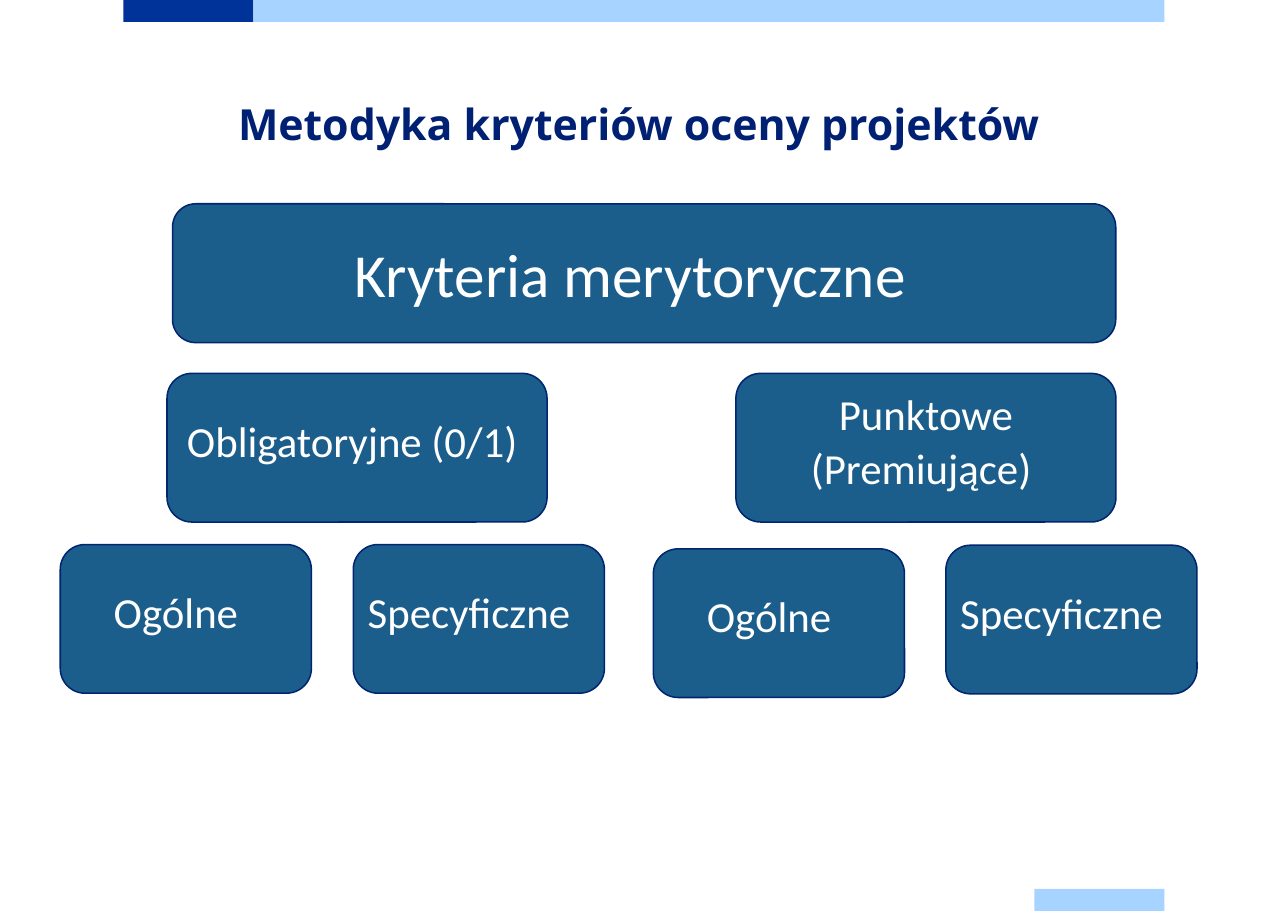
import dataclasses
import typing

import lxml.etree
import pptx
import pptx.dml.color
import pptx.enum.shapes
import pptx.enum.text
import pptx.oxml.ns
import pptx.util

W, H = pptx.util.Inches(11.69), pptx.util.Inches(8.27)
COLORS = {
    "navy": "003399",
    "sky": "A6D3FF",
    "title": "002073",
    "box": "1B5D8B",
    "edge": "002671",
    "text": "FFFFFF",
}
SHAPES = pptx.enum.shapes.MSO_SHAPE
ANCHOR = pptx.enum.text.MSO_ANCHOR


@dataclasses.dataclass(frozen=True)
class Area:
    """Percentages of the slide's width and height."""
    left: float
    top: float
    width: float
    height: float

    def emu(self) -> tuple[int, int, int, int]:
        return (int(W * self.left / 100), int(H * self.top / 100),
                int(W * self.width / 100), int(H * self.height / 100))


@dataclasses.dataclass(frozen=True)
class Style:
    size: float = 28
    font: str = "Calibri"
    color: str = "text"
    bold: bool = False
    spacing: float | None = 24
    before: float = 11


@dataclasses.dataclass(frozen=True)
class Box:
    area: Area
    lines: tuple[str, ...]
    style: Style = Style()
    left_inset: float = 0.1
    right_inset: float = 0.1


def rgb(name: str) -> pptx.dml.color.RGBColor:
    return pptx.dml.color.RGBColor.from_string(COLORS[name])


def place(sp: typing.Any, area: Area) -> None:
    sp.left, sp.top, sp.width, sp.height = area.emu()


def write(sp: typing.Any, lines: tuple[str, ...], style: Style,
          anchor: typing.Any, left: float = 0, right: float = 0,
          vertical: float = 0) -> None:
    tf = sp.text_frame
    tf.word_wrap = True
    tf.auto_size = pptx.enum.text.MSO_AUTO_SIZE.NONE
    tf.vertical_anchor = anchor
    tf.margin_left, tf.margin_right = pptx.util.Inches(left), pptx.util.Inches(right)
    tf.margin_top = tf.margin_bottom = pptx.util.Inches(vertical)
    for i, line in enumerate(lines):
        p = tf.add_paragraph() if i else tf.paragraphs[0]
        p.alignment = pptx.enum.text.PP_ALIGN.CENTER
        p.space_before = pptx.util.Pt(style.before if i else 0)
        if style.spacing:
            p.line_spacing = pptx.util.Pt(style.spacing)
        r = p.add_run()
        r.text = line
        r.font.size = pptx.util.Pt(style.size)
        r.font.name = style.font
        r.font.bold = style.bold
        r.font.color.rgb = rgb(style.color)


def paint_box(sp: typing.Any) -> None:
    sp.fill.solid()
    sp.fill.fore_color.rgb = rgb("box")
    sp.line.color.rgb = rgb("edge")
    sp.line.width = pptx.util.Pt(1)


def add_bar(s: typing.Any, area: Area, color: str) -> None:
    sp = s.shapes.add_shape(SHAPES.RECTANGLE, *area.emu())
    sp.shadow.inherit = False
    sp.fill.solid()
    sp.fill.fore_color.rgb = rgb(color)
    sp.line.fill.background()


def add_box(s: typing.Any, box: Box) -> None:
    sp = s.shapes.add_shape(SHAPES.ROUNDED_RECTANGLE, *box.area.emu())
    sp.shadow.inherit = False
    paint_box(sp)
    write(sp, box.lines, box.style, ANCHOR.MIDDLE,
          box.left_inset, box.right_inset, 0.05)


def fill_body(sp: typing.Any, box: Box) -> None:
    qn = pptx.oxml.ns.qn
    place(sp, box.area)
    geom = lxml.etree.SubElement(sp.element.spPr, qn("a:prstGeom"), prst="roundRect")
    lxml.etree.SubElement(geom, qn("a:avLst"))
    paint_box(sp)
    pPr = sp.text_frame.paragraphs[0]._p.get_or_add_pPr()
    pPr.set("marL", "0")
    pPr.set("indent", "0")
    lxml.etree.SubElement(pPr, qn("a:buNone"))
    write(sp, box.lines, box.style, ANCHOR.MIDDLE)


BARS = (
    (Area(9.58, 0, 10.09, 2.42), "navy"),
    (Area(19.67, 0, 70.74, 2.42), "sky"),
    (Area(80.32, 97.58, 10.09, 2.42), "sky"),
)
GROUP_TOP, GROUP_W, ROW_H = 40.99, 29.51, 16.32
MANDATORY = Box(Area(12.97, GROUP_TOP, GROUP_W, ROW_H), ("Obligatoryjne (0/1) ",))
LEAVES = (
    (4.68, 59.78, "Ogólne"),
    (27.43, 59.78, "Specyficzne"),
    (50.73, 60.25, "Ogólne"),
    (73.44, 59.85, "Specyficzne"),
)
BOXES = (
    Box(Area(13.4, 22.37, 73.23, 15.24), ("Kryteria merytoryczne",),
        Style(size=40, spacing=None), right_inset=0.35),
    Box(Area(57.14, GROUP_TOP, GROUP_W, ROW_H), ("Punktowe", "(Premiujące) ")),
    *(Box(Area(left, top, 19.5, ROW_H), (name,), left_inset=0, right_inset=0.18)
      for left, top, name in LEAVES),
)


def main() -> None:
    prs = pptx.Presentation()
    prs.slide_width, prs.slide_height = W, H
    s = prs.slides.add_slide(prs.slide_layouts[1])
    for area, color in BARS:
        add_bar(s, area, color)
    title = s.shapes.title
    place(title, Area(9.58, 10.28, 80.84, 9.55))
    write(title, ("Metodyka kryteriów oceny projektów ",),
          Style(font="Open Sans", color="title", bold=True, spacing=36), ANCHOR.TOP)
    fill_body(s.placeholders[1], MANDATORY)
    for box in BOXES:
        add_box(s, box)
    prs.save("out.pptx")


if __name__ == "__main__":
    main()
